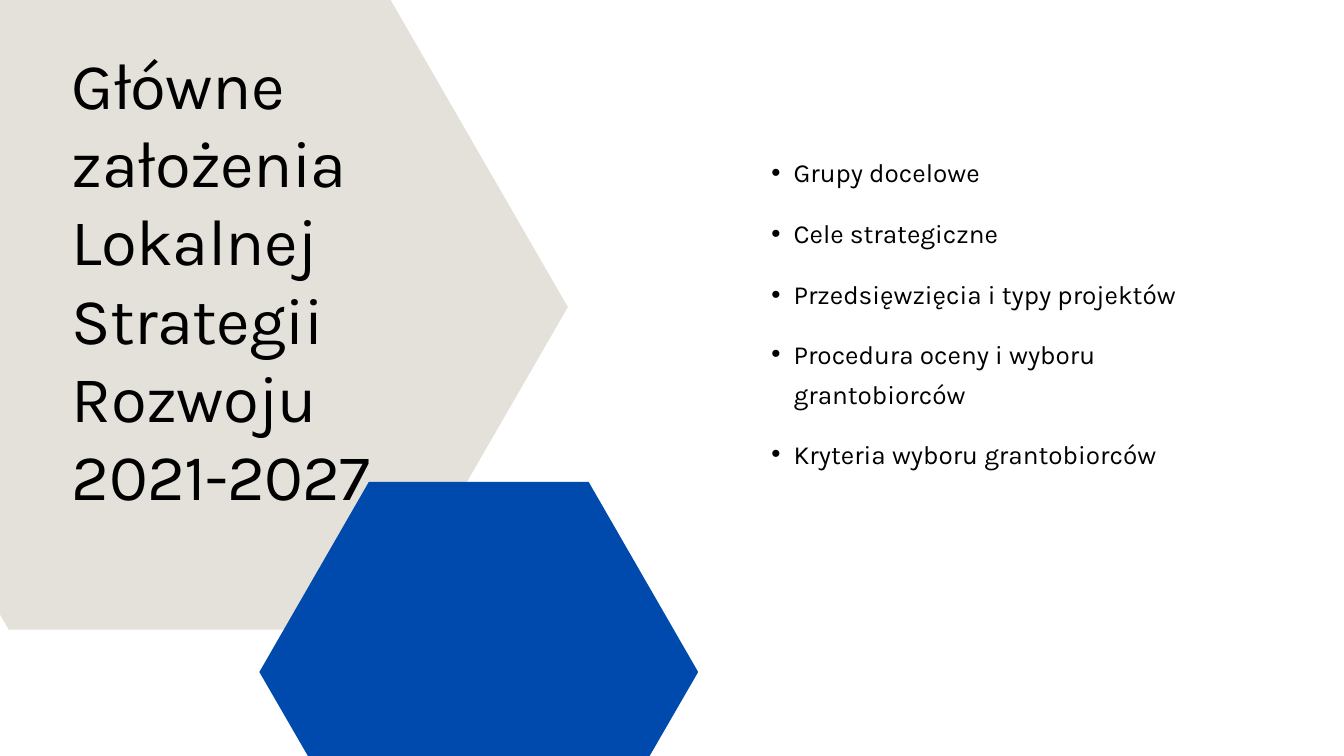
import pptx
import pptx.dml.color
import pptx.util
from lxml import etree
from pptx.oxml.ns import qn

PX = 9144  # EMU per px, 100 px to the inch
SLIDE_SIZE = (2000, 1125)
FONT = "Karla"
COLORS = {"paper": "FFFFFF", "sand": "E4E1DA", "blue": "004AAD", "ink": "000000"}

# left, top, width, height, colour
HEXAGONS = [
    (-264, -23, 1109, 960, "sand"),
    (386, 717, 653, 565, "blue"),
]
TITLE_LINES = ["Główne założenia Lokalnej Strategii Rozwoju", "2021-2027"]
TITLE_FRAME = (107, 65, 532, 701)

TOPICS_LEFT = 1115
BULLET_INDENT = 33
# top, width, height, text
TOPICS = [
    (219, 668, 57, "Grupy docelowe"),
    (310, 668, 57, "Cele strategiczne"),
    (401, 803, 57, "Przedsięwzięcia i typy projektów"),
    (489, 668, 117, "Procedura oceny i wyboru grantobiorców"),
    (638, 668, 57, "Kryteria wyboru grantobiorców"),
]


def color(name):
    return pptx.dml.color.RGBColor.from_string(COLORS[name])


def add_hexagon(page, left, top, width, height, fill):
    """Draw a flat-topped hexagon whose corners sit at quarters of its width."""
    right, bottom, middle = left + width, top + height, top + height / 2
    inner_left, inner_right = left + width / 4, right - width / 4
    builder = page.shapes.build_freeform(right, middle, scale=PX)
    builder.add_line_segments([
        (inner_right, bottom), (inner_left, bottom), (left, middle),
        (inner_left, top), (inner_right, top),
    ], close=True)
    hexagon = builder.convert_to_shape()
    hexagon.shadow.inherit = False
    hexagon.fill.solid()
    hexagon.fill.fore_color.rgb = color(fill)
    hexagon.line.fill.background()


def add_text(page, frame, lines, size, line_spacing):
    """Add an inset-free text box and return its paragraphs."""
    box = page.shapes.add_textbox(*(value * PX for value in frame))
    text_frame = box.text_frame
    text_frame.word_wrap = True
    text_frame.margin_left = text_frame.margin_right = 0
    text_frame.margin_top = text_frame.margin_bottom = 0
    text_frame.text = "\n".join(lines)
    for paragraph in text_frame.paragraphs:
        paragraph.line_spacing = pptx.util.Pt(line_spacing)
        for span in paragraph.runs:
            span.font.name = FONT
            span.font.size = pptx.util.Pt(size)
            span.font.color.rgb = color("ink")
    return text_frame.paragraphs


def add_bullet(paragraph):
    paragraph.level = 1
    properties = paragraph._p.get_or_add_pPr()
    properties.set("marL", str(2 * BULLET_INDENT * PX))
    properties.set("indent", str(-BULLET_INDENT * PX))
    etree.SubElement(properties, qn("a:buFont")).set("typeface", "Arial")
    etree.SubElement(properties, qn("a:buChar")).set("char", "•")


def main():
    deck = pptx.Presentation()
    deck.slide_width, deck.slide_height = (side * PX for side in SLIDE_SIZE)
    page = deck.slides.add_slide(deck.slide_layouts[6])
    page.background.fill.solid()
    page.background.fill.fore_color.rgb = color("paper")

    for hexagon in HEXAGONS:
        add_hexagon(page, *hexagon)

    for paragraph in add_text(page, TITLE_FRAME, TITLE_LINES, 70, 84):
        for span in paragraph.runs:
            span.font._element.set("spc", "-70")

    for top, width, height, topic in TOPICS:
        frame = (TOPICS_LEFT, top, width, height)
        for paragraph in add_text(page, frame, [topic], 28, 43.7):
            add_bullet(paragraph)

    deck.save("out.pptx")


if __name__ == "__main__":
    main()
